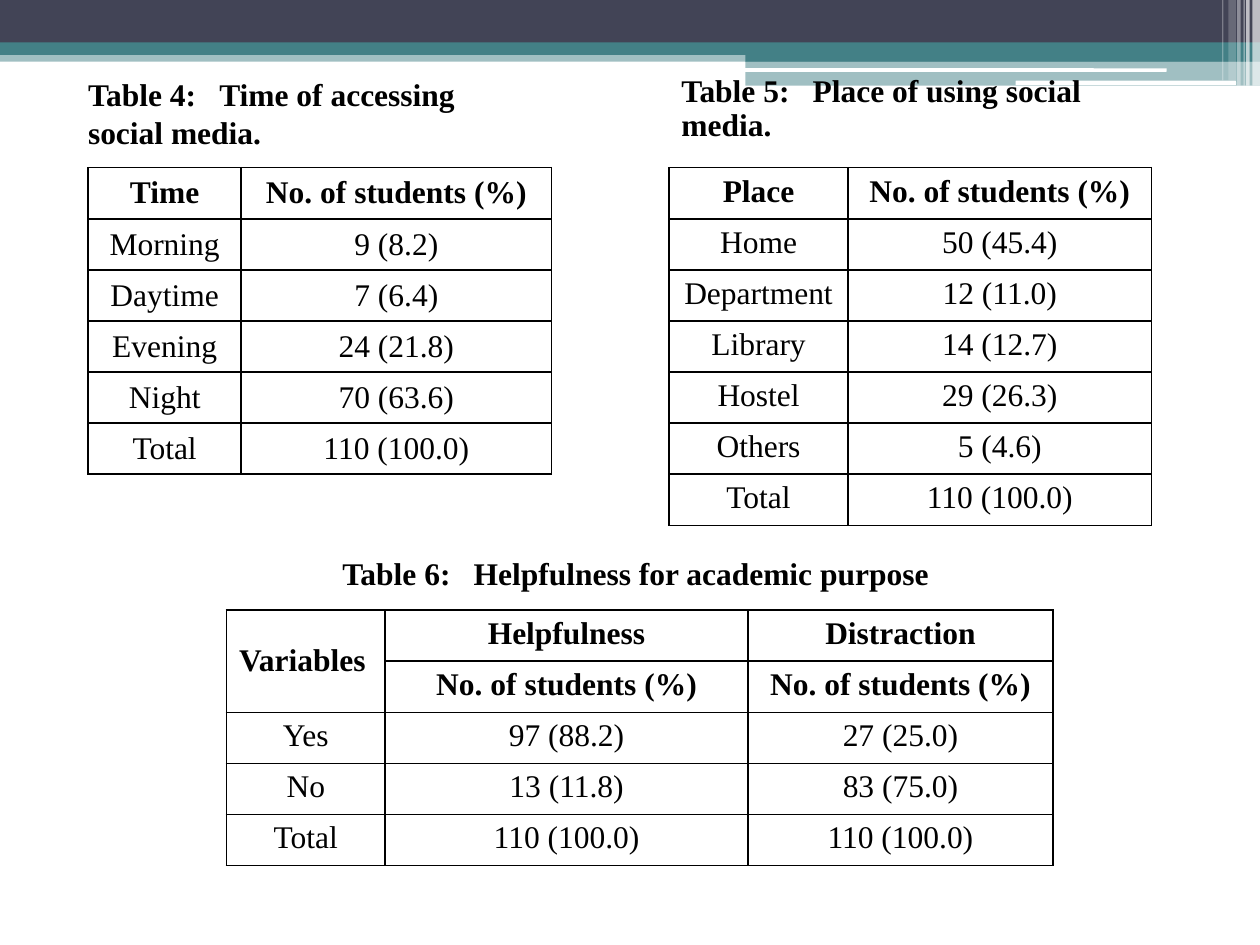
from lxml.etree import SubElement
from pptx import Presentation
from pptx.dml.color import RGBColor
from pptx.enum.shapes import MSO_SHAPE
from pptx.enum.text import MSO_ANCHOR, PP_ALIGN
from pptx.oxml.ns import qn
from pptx.util import Pt

COLORS = {"navy": "424456", "teal": "438086", "white": "FFFFFF", "black": "000000"}
FONT = {"name": "Times New Roman", "size": Pt(18)}
COUNT = "No. of students (%)"
ROW_H = 29.2
TITLE_TAB = 75

# left, top, width, height, colour, opacity %
BANDS = [
    (0, 28.8, 720, 6.5, "teal", 50),
    (0, 0, 720, 24.5, "navy", 100),
    (0, 24.2, 720, 7.2, "teal", 100),
    (426, 28, 294, 7.2, "teal", 100),
    (426, 35, 294, 14, "teal", 50),
]
ROUNDED_LINES = [
    (425.5, 39, 241.2, 2, "white", 100),
    (580.3, 46.1, 126, 2.6, "white", 100),
]
STRIPES = [
    (715.7, 0, 4.3, 49, "white", 65),
    (712.1, 0, 2, 49, "white", 65),
    (710.6, 0, 0.7, 49, "white", 60),
    (707, 0, 2, 49, "white", 40),
    (702, 0, 4.3, 46, "white", 20),
    (698.4, 0, 0.7, 46, "white", 30),
]

# left, top, width, height, line spacing, label, title
TITLES = [
    (43.2, 39.6, 265, 56, 1, "Table 4:", "Time of accessing social media."),
    (382.3, 39.6, 275.8, 38.2, 0.9, "Table 5:", "Place of using social media."),
    (188.6, 315.4, 350.6, 28, 0.9, "Table 6:", "Helpfulness for academic purpose"),
]

TABLES = [
    dict(at=(50.4, 95.8), cols=(87.4, 177.4), anchor=MSO_ANCHOR.MIDDLE, heads=1, rows=[
        ("Time", COUNT),
        ("Morning", "9 (8.2)"),
        ("Daytime", "7 (6.4)"),
        ("Evening", "24 (21.8)"),
        ("Night", "70 (63.6)"),
        ("Total", "110 (100.0)"),
    ]),
    dict(at=(382.4, 95.8), cols=(102.2, 173.5), anchor=MSO_ANCHOR.TOP, heads=1, rows=[
        ("Place", COUNT),
        ("Home", "50 (45.4)"),
        ("Department", "12 (11.0)"),
        ("Library", "14 (12.7)"),
        ("Hostel", "29 (26.3)"),
        ("Others", "5 (4.6)"),
        ("Total", "110 (100.0)"),
    ]),
    dict(at=(129.4, 348.6), cols=(90.7, 207.4, 174.2), anchor=MSO_ANCHOR.TOP, heads=2, rows=[
        ("Variables", "Helpfulness", "Distraction"),
        (None, COUNT, COUNT),
        ("Yes", "97 (88.2)", "27 (25.0)"),
        ("No", "13 (11.8)", "83 (75.0)"),
        ("Total", "110 (100.0)", "110 (100.0)"),
    ]),
]


def rgb(name):
    return RGBColor.from_string(COLORS[name])


def add_band(s, kind, x, y, w, h, color, opacity):
    sp = s.shapes.add_shape(kind, Pt(x), Pt(y), Pt(w), Pt(h))
    sp.shadow.inherit = False
    sp.line.fill.background()
    sp.fill.solid()
    sp.fill.fore_color.rgb = rgb(color)
    if opacity < 100:
        clr = sp.fill._xPr.find(".//" + qn("a:srgbClr"))
        SubElement(clr, qn("a:alpha"), val=str(opacity * 1000))


def write(p, text, bold):
    r = p.add_run()
    r.text = text
    for key, value in {**FONT, "bold": bold}.items():
        setattr(r.font, key, value)
    r.font.color.rgb = rgb("black")


def add_title(s, x, y, w, h, spacing, label, title):
    tf = s.shapes.add_textbox(Pt(x), Pt(y), Pt(w), Pt(h)).text_frame
    tf.word_wrap = True
    p = tf.paragraphs[0]
    p.line_spacing = spacing
    tabs = SubElement(p._p.get_or_add_pPr(), qn("a:tabLst"))
    SubElement(tabs, qn("a:tab"), pos=str(Pt(TITLE_TAB)), algn="l")
    write(p, f"{label}\t{title}", True)


def set_borders(cell):
    tcPr = cell._tc.get_or_add_tcPr()
    for side in ("lnL", "lnR", "lnT", "lnB"):
        ln = SubElement(tcPr, qn("a:" + side), w=str(Pt(1)))
        fill = SubElement(ln, qn("a:solidFill"))
        SubElement(fill, qn("a:srgbClr"), val=COLORS["black"])


def add_grid(s, at, cols, anchor, heads, rows):
    """Add a bordered table; a None entry merges into the cell above it."""
    x, y = at
    table = s.shapes.add_table(len(rows), len(cols), Pt(x), Pt(y),
                               Pt(sum(cols)), Pt(ROW_H * len(rows))).table
    table.first_row = table.horz_banding = False
    for column, width in zip(table.columns, cols):
        column.width = Pt(width)
    for i, row in enumerate(rows):
        table.rows[i].height = Pt(ROW_H)
        for j, text in enumerate(row):
            cell = table.cell(i, j)
            set_borders(cell)
            cell.fill.background()
            cell.vertical_anchor = anchor
            if text is None:
                above = table.cell(i - 1, j)
                above.merge(cell)
                above.vertical_anchor = MSO_ANCHOR.MIDDLE
                above.text_frame.paragraphs[0].alignment = PP_ALIGN.LEFT
                continue
            p = cell.text_frame.paragraphs[0]
            p.alignment = PP_ALIGN.CENTER
            write(p, text, i < heads)


prs = Presentation()
prs.slide_width, prs.slide_height = Pt(720), Pt(540)
s = prs.slides.add_slide(prs.slide_layouts[6])

for kind, bands in ((MSO_SHAPE.RECTANGLE, BANDS),
                    (MSO_SHAPE.ROUNDED_RECTANGLE, ROUNDED_LINES),
                    (MSO_SHAPE.RECTANGLE, STRIPES)):
    for band in bands:
        add_band(s, kind, *band)
for grid in TABLES:
    add_grid(s, **grid)
for title in TITLES:
    add_title(s, *title)

prs.save("out.pptx")
